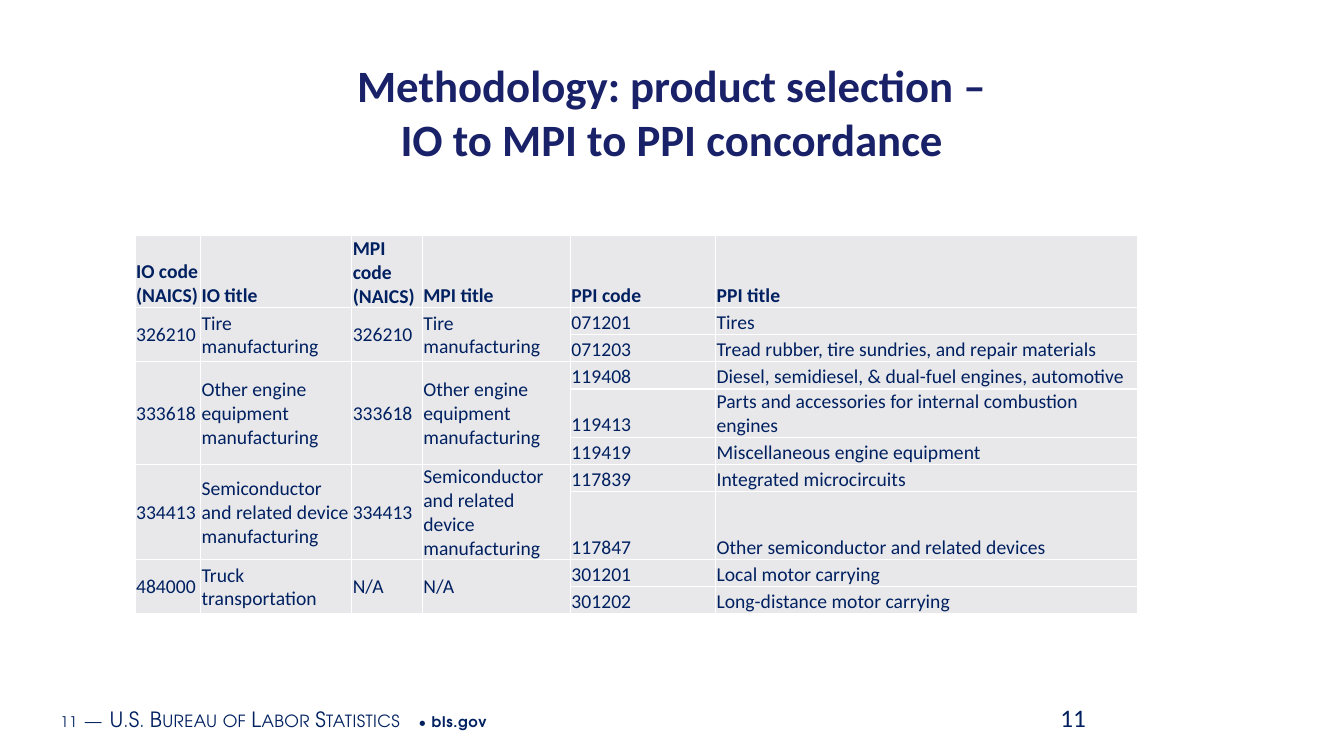
from lxml import etree
from pptx import Presentation
from pptx.dml.color import RGBColor
from pptx.enum.text import MSO_ANCHOR, PP_ALIGN
from pptx.oxml.ns import qn
from pptx.util import Pt

MIDDLE, BOTTOM = MSO_ANCHOR.MIDDLE, MSO_ANCHOR.BOTTOM
CENTER = PP_ALIGN.CENTER
NAVY, TITLE, GREY, WHITE = "002060", "192168", "E8E8EB", "FFFFFF"
BODY, FOOT = "Calibri", "TeX Gyre Adventor"

WIDTHS = [46.8, 108, 50.4, 105.84, 103.68, 301.68]
HEAD_H, ROW_H, TABLE_H = 38.16, 19.44, 270.72
HEADS = ["IO code (NAICS)", "IO title", "MPI code (NAICS)", "MPI title",
         "PPI code", "PPI title"]

# Each group: the merged cells on the left, then its PPI rows
GROUPS = [
    (["326210", "Tire manufacturing"] * 2,
     [("071201", "Tires"),
      ("071203", "Tread rubber, tire sundries, and repair materials")]),
    (["333618", "Other engine equipment manufacturing"] * 2,
     [("119408", "Diesel, semidiesel, & dual-fuel engines, automotive"),
      ("119413", "Parts and accessories for internal combustion engines"),
      ("119419", "Miscellaneous engine equipment")]),
    (["334413", "Semiconductor and related device manufacturing"] * 2,
     [("117839", "Integrated microcircuits"),
      ("117847", "Other semiconductor and related devices")]),
    (["484000", "Truck transportation", "N/A", "N/A"],
     [("301201", "Local motor carrying"),
      ("301202", "Long-distance motor carrying")]),
]


def color(value):
    return RGBColor.from_string(value)


def add_run(para, text, size, font=BODY, tint=NAVY, bold=False):
    run = para.add_run()
    run.text = text
    run.font.size = Pt(size)
    run.font.name = font
    run.font.bold = bold
    run.font.color.rgb = color(tint)
    return run


def add_box(slide, left, top, width, height):
    box = slide.shapes.add_textbox(Pt(left), Pt(top), Pt(width), Pt(height))
    frame = box.text_frame
    frame.word_wrap = True
    frame.vertical_anchor = MIDDLE
    return frame


def add_title(slide, lines):
    title = slide.shapes.title
    title.left, title.top = Pt(38.88), Pt(36)
    title.width, title.height = Pt(882), Pt(87.84)
    title.text_frame.vertical_anchor = MIDDLE
    para = title.text_frame.paragraphs[0]
    para.alignment = CENTER
    for i, line in enumerate(lines):
        if i:
            para.add_line_break()
        add_run(para, line, 32, tint=TITLE, bold=True)


def add_footer(slide):
    frame = add_box(slide, 38.16, 498.96, 609.84, 28.8)
    frame.margin_left = frame.margin_right = Pt(5.04)
    frame.margin_top = frame.margin_bottom = Pt(2.88)
    para = frame.paragraphs[0]
    # Text, size, small capitals, bold
    parts = [("11", 10.5, False, False), (" ", 16, False, False),
             ("—", 15, True, False), (" ", 16, False, False),
             ("U.S. Bureau of Labor Statistics", 15, True, False),
             (" • ", 10.5, False, False), ("bls.gov", 10.5, False, True)]
    for text, size, small, bold in parts:
        props = add_run(para, text, size, FOOT, bold=bold).font._element
        props.set("spc", "30" if small else "50")
        if small:
            props.set("cap", "small")


def add_edges(cell):
    props = cell._tc.get_or_add_tcPr()
    for i, side in enumerate(("lnL", "lnR", "lnT", "lnB")):
        line = etree.Element(qn("a:" + side), w=str(Pt(1)))
        fill = etree.SubElement(line, qn("a:solidFill"))
        etree.SubElement(fill, qn("a:srgbClr"), val=WHITE)
        props.insert(i, line)


def fill_cell(cell, text, anchor=BOTTOM, bold=False):
    cell.vertical_anchor = anchor
    cell.margin_left = cell.margin_right = cell.margin_top = Pt(0.72)
    cell.margin_bottom = Pt(0)
    add_run(cell.text_frame.paragraphs[0], text, 14, bold=bold)


def add_grid(slide):
    count = 1 + sum(len(rows) for _, rows in GROUPS)
    shape = slide.shapes.add_table(count, len(WIDTHS), Pt(96.48), Pt(168.48),
                                   Pt(sum(WIDTHS)), Pt(TABLE_H))
    table = shape.table
    table.horz_banding = False
    for col, width in zip(table.columns, WIDTHS):
        col.width = Pt(width)
    for i, row in enumerate(table.rows):
        row.height = Pt(ROW_H if i else HEAD_H)
    shape.height = Pt(TABLE_H)
    for cell in table.iter_cells():
        cell.fill.solid()
        cell.fill.fore_color.rgb = color(GREY)
        add_edges(cell)

    # Header row
    for c, text in enumerate(HEADS):
        fill_cell(table.cell(0, c), text, bold=True)

    # Groups
    top = 1
    for left, rows in GROUPS:
        for c, text in enumerate(left):
            cell = table.cell(top, c)
            cell.merge(table.cell(top + len(rows) - 1, c))
            fill_cell(cell, text, MIDDLE)
        for r, pair in enumerate(rows, top):
            for c, text in enumerate(pair, len(left)):
                fill_cell(table.cell(r, c), text)
        top += len(rows)


def main():
    deck = Presentation()
    deck.slide_width, deck.slide_height = Pt(960), Pt(540)
    slide = deck.slides.add_slide(deck.slide_layouts[5])
    add_footer(slide)
    add_title(slide, ["Methodology: product selection –",
                      "IO to MPI to PPI concordance"])
    # Page number
    page = add_box(slide, 750.24, 498.24, 54, 28.8)
    add_run(page.paragraphs[0], "11", 18)
    add_grid(slide)
    deck.save("out.pptx")


if __name__ == "__main__":
    main()
